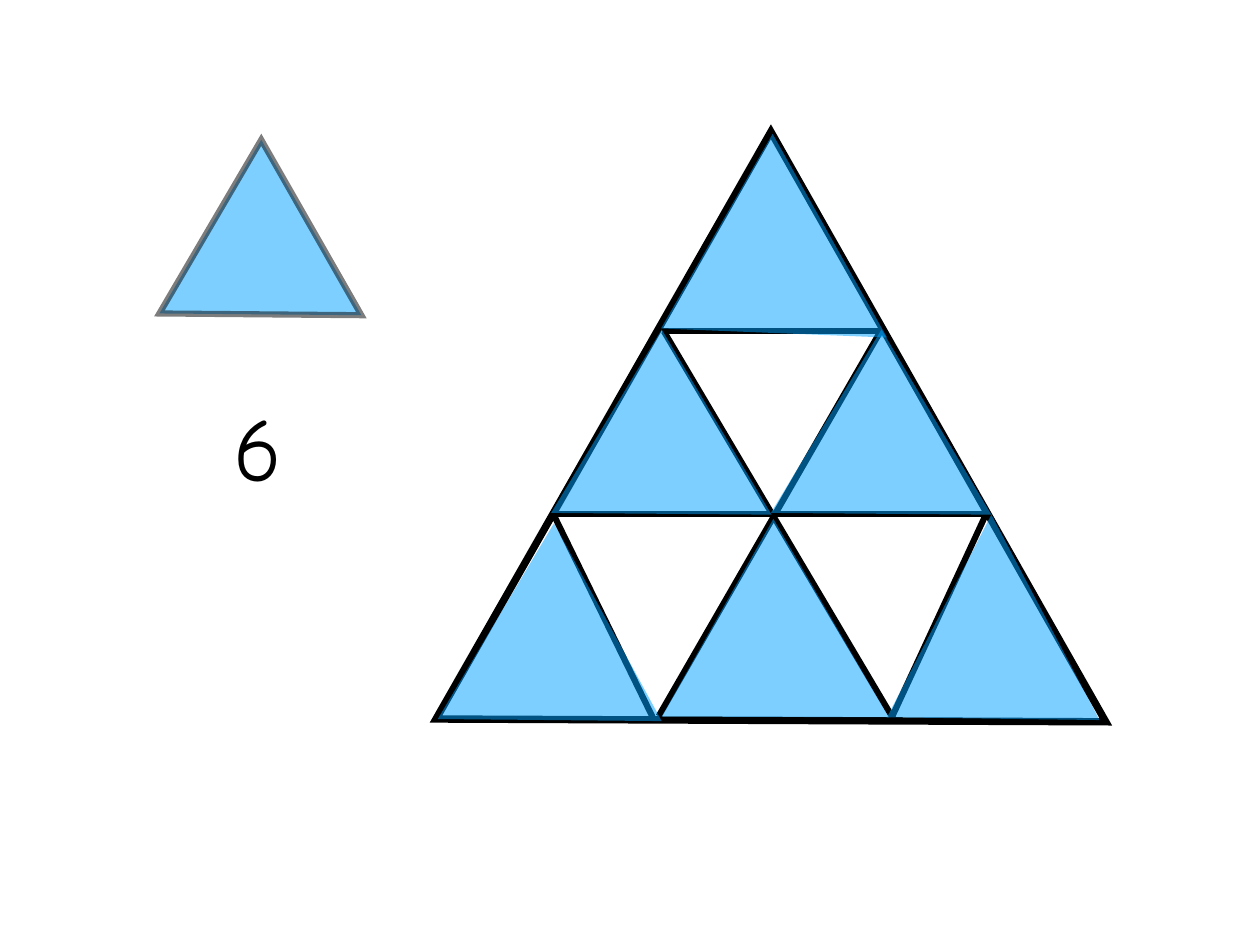
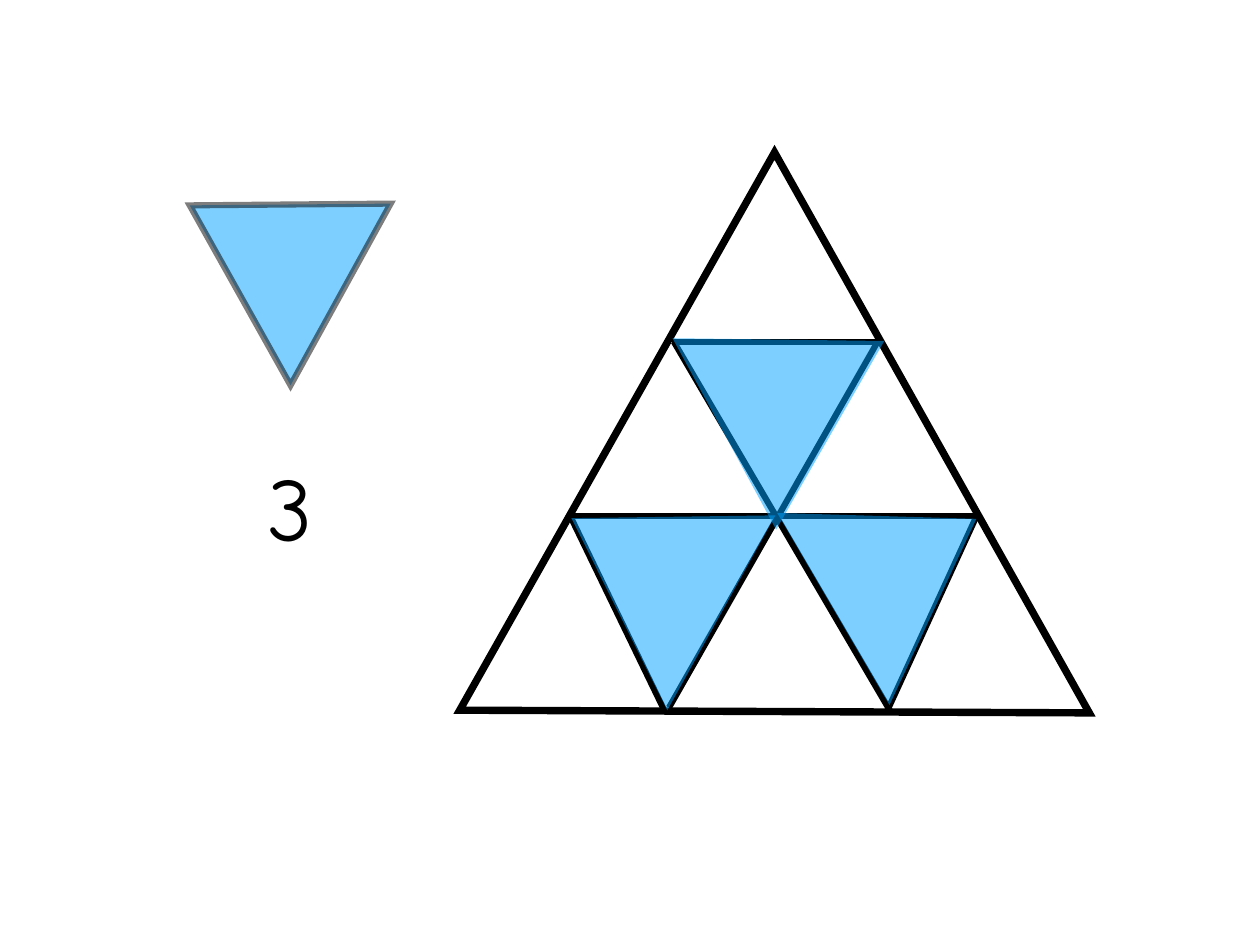
from pptx import Presentation
from pptx.dml.color import RGBColor
from pptx.enum import shapes as kinds, text
from pptx.oxml import ns, xmlchemy as xml
from pptx.util import Cm, Pt

BLACK = RGBColor(0x00, 0x00, 0x00)
BLUE = RGBColor(0x00, 0xA2, 0xFF)
FONT = "Comic Neue"
ALPHA = 51

# The big triangle at full size, in cm from its top left corner
FRAME = [(9.6, 0), (19.2, 16.92), (0, 16.84)]
BARS = [
    [(6.48, 5.72), (12.73, 5.72)],
    [(3.43, 10.97), (15.75, 10.97)],
    [(6.53, 5.72), (13.16, 16.92)],
    [(3.38, 11), (6.25, 16.87)],
    [(12.73, 5.74), (6.38, 16.76)],
    [(15.75, 11), (13.03, 16.87)],
]

# Shaded triangles, in cm on the slide
UP_TILES = [
    [(22.15, 3.84), (25.43, 9.68), (18.95, 9.42)],
    [(25.27, 9.45), (28.42, 14.76), (22.1, 14.71)],
    [(18.97, 9.45), (22.12, 14.76), (15.8, 14.71)],
    [(15.88, 15.01), (18.97, 20.68), (12.55, 20.62)],
    [(22.17, 14.88), (25.48, 20.57), (18.97, 20.55)],
    [(28.42, 14.76), (31.52, 20.65), (25.43, 20.57)],
]
DOWN_TILES = [
    [(22.25, 15.19), (25.35, 9.78), (19.28, 9.7)],
    [(19.13, 20.37), (22.23, 14.78), (16.38, 14.86)],
    [(25.5, 20.22), (27.99, 14.88), (22.28, 14.71)],
]
UP_KEY = [(7.49, 4.01), (10.36, 9.04), (4.57, 8.99)]
DOWN_KEY = [(8.33, 11.05), (11.2, 5.84), (5.44, 5.89)]


def fade(fill, alpha):
    """Set the opacity of a solid fill, in percent."""
    color = fill._xPr.find(ns.qn("a:solidFill"))[0]
    add_tag(color, "a:alpha").set("val", str(alpha * 1000))


def add_tag(parent, tag):
    child = xml.OxmlElement(tag)
    parent.append(child)
    return child


def add_triangle(shapes, points, fill=None, width=0, alpha=100):
    """Draw a triangle; without a width it has no line."""
    first, *rest = [(Cm(x), Cm(y)) for x, y in points]
    pen = shapes.build_freeform(*first)
    pen.add_line_segments(rest, close=True)
    shape = pen.convert_to_shape()
    shape.shadow.inherit = False
    if fill is None:
        shape.fill.background()
    else:
        shape.fill.solid()
        shape.fill.fore_color.rgb = fill
        fade(shape.fill, alpha)
    if width:
        shape.line.width = Pt(width)
        shape.line.color.rgb = BLACK
        fade(shape.line.fill, alpha)
        add_tag(shape.line._get_or_add_ln(), "a:miter").set("lim", "800000")
    else:
        shape.line.fill.background()


def add_bar(shapes, start, end):
    ends = [Cm(v) for v in (*start, *end)]
    bar = shapes.add_connector(kinds.MSO_CONNECTOR.STRAIGHT, *ends)
    bar.line.width = Pt(5)
    bar.line.color.rgb = BLACK
    add_tag(bar._element.spPr, "a:effectLst")


def add_frame(slide, left, top, wide=1, high=1):
    """Draw the divided triangle as one group, scaled from its corner."""
    def place(points):
        return [(left + x * wide, top + y * high) for x, y in points]

    shapes = slide.shapes.add_group_shape().shapes
    add_triangle(shapes, place(FRAME), width=6)
    for bar in BARS:
        add_bar(shapes, *place(bar))


def add_count(slide, count, left, top):
    box = slide.shapes.add_textbox(Cm(left), Cm(top), Cm(1.88), Cm(3.84))
    frame = box.text_frame
    frame.word_wrap = False
    frame.vertical_anchor = text.MSO_ANCHOR.MIDDLE
    frame.margin_left = frame.margin_right = Cm(0.15)
    frame.margin_top = frame.margin_bottom = Cm(0.15)
    frame.text = str(count)
    line = frame.paragraphs[0]
    line.alignment = text.PP_ALIGN.CENTER
    font = line.runs[0].font
    font.name, font.size = FONT, Pt(73)
    font.color.rgb = BLACK


def add_puzzle(deck, frame, tiles, key, spot):
    """Add a slide: divided triangle, shaded tiles, key and their count."""
    slide = deck.slides.add_slide(deck.slide_layouts[6])
    add_frame(slide, *frame)
    for tile in tiles:
        add_triangle(slide.shapes, tile, BLUE, alpha=ALPHA)
    add_triangle(slide.shapes, key, BLUE, width=5, alpha=ALPHA)
    add_count(slide, len(tiles), *spot)


def main():
    deck = Presentation()
    deck.slide_width, deck.slide_height = Cm(36.12), Cm(27.1)
    add_puzzle(deck, (12.5, 3.78), UP_TILES, UP_KEY, (6.45, 10.87))
    add_puzzle(deck, (13.18, 4.37, 0.94, 0.95), DOWN_TILES, DOWN_KEY,
               (7.37, 12.57))
    deck.save("out.pptx")


if __name__ == "__main__":
    main()
